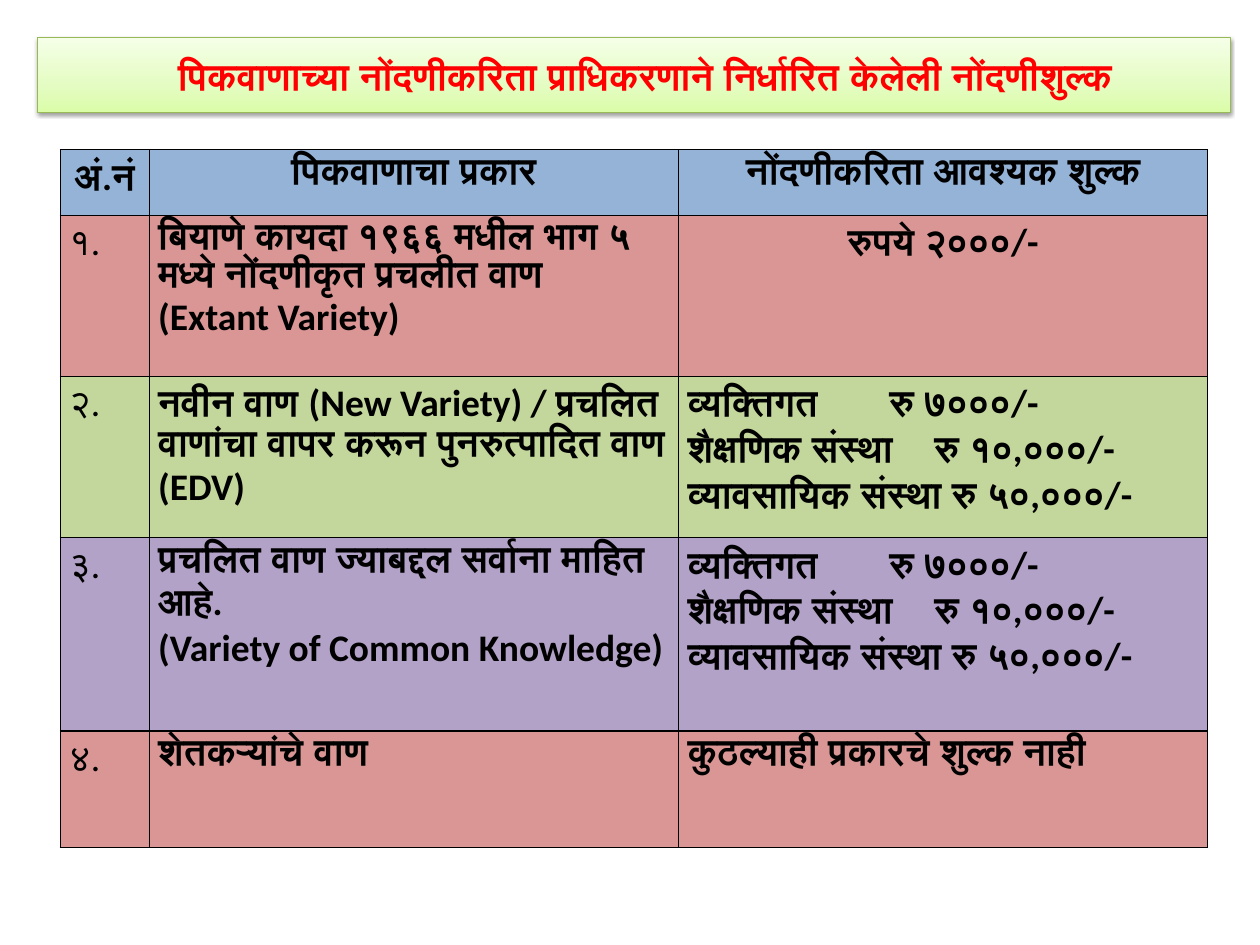
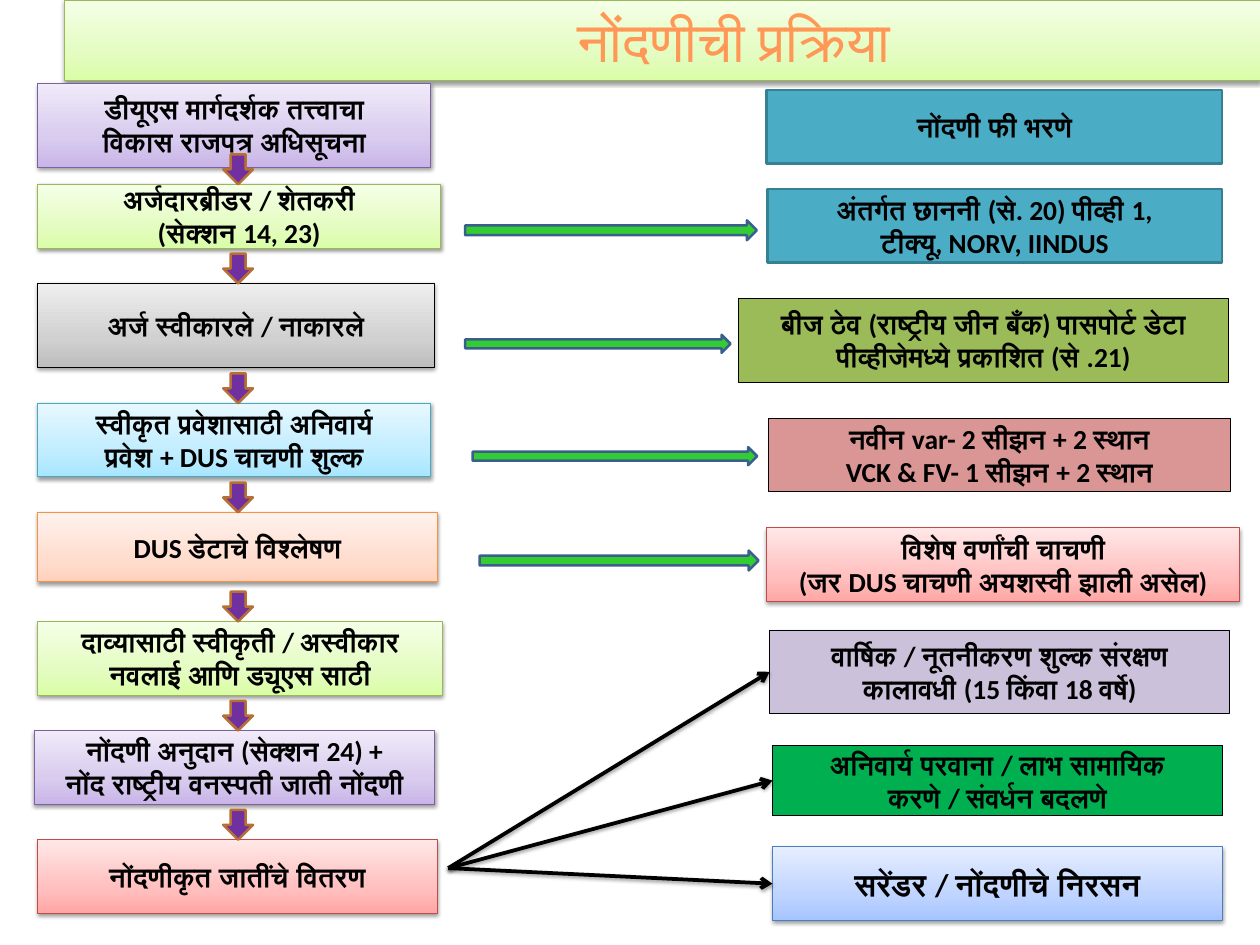
import copy

import lxml.etree
import pptx
import pptx.dml.color
import pptx.enum.shapes
import pptx.enum.text
import pptx.oxml.ns
import pptx.util

Cm = pptx.util.Cm
Pt = pptx.util.Pt
qn = pptx.oxml.ns.qn
RGBColor = pptx.dml.color.RGBColor
MSO_SHAPE = pptx.enum.shapes.MSO_SHAPE
PP_ALIGN = pptx.enum.text.PP_ALIGN
MSO_ANCHOR = pptx.enum.text.MSO_ANCHOR

FONT = "Calibri"

# The last value of a shape colour is its outline; three values before it form a gradient.
COLOURS = {
    "black": "000000",
    "red": "FF0000",
    "orange": "FF9856",
    "header": "95B3D7",
    "rose": "D99694",
    "olive": "C3D69B",
    "violet": "B3A2C7",
    "lime box": "DAFDA7 E4FCC2 F5FFE7 98B955",
    "lilac box": "C9B5E8 D8CBEE F0EAF9 7D60A0",
    "grey box": "BDBDBD D1D1D1 EEEEEE 000000",
    "sky box": "A7E6FF C1EDFF E7F8FF 46AAC5",
    "peach box": "FFD2BD FFDED0 FFF2ED F69240",
    "pink box": "FFA6A5 FFC0BF FFE7E7 BF4C48",
    "blue box": "A4C4FF BFD4FF E6EEFF 4B7EBC",
    "teal box": "4BACC6 377F92",
    "olive box": "9BBB59 000000",
    "rose box": "D99694 000000",
    "mauve box": "CCC1DA 000000",
    "green box": "00B050 000000",
    "down arrow": "7030A0 B76F34",
    "right arrow": "33CC33 3A5F8C",
}


def write_text(frame, text, size=22, colour="black", bold=True, align=PP_ALIGN.CENTER, tab_stops=()):
    """Write one paragraph per line; tab_stops holds one position in cm for each tabbed line."""
    for index, line in enumerate(text.split("\n")):
        paragraph = frame.paragraphs[0] if index == 0 else frame.add_paragraph()
        paragraph.alignment = align
        run = paragraph.add_run()
        run.text = line
        run.font.name = FONT
        run.font.size = Pt(size)
        run.font.bold = bold
        run.font.color.rgb = RGBColor.from_string(COLOURS[colour])
        if "\t" in line:
            tab_list = lxml.etree.SubElement(paragraph._p.get_or_add_pPr(), qn("a:tabLst"))
            lxml.etree.SubElement(tab_list, qn("a:tab"), pos=str(Cm(tab_stops[index])), algn="l")


def style_shape(shape, colour, line_width=0.75):
    """Set fill, outline and shadow; only gradient shapes and connectors cast a shadow."""
    *fills, outline = COLOURS[colour].split()
    shape.line.color.rgb = RGBColor.from_string(outline)
    shape.line.width = Pt(line_width)
    if fills:
        shape.shadow.inherit = False
        effects = shape._element.spPr.find(qn("a:effectLst"))
    else:
        effects = lxml.etree.SubElement(shape._element.spPr, qn("a:effectLst"))
    if len(fills) == 1:
        shape.fill.solid()
        shape.fill.fore_color.rgb = RGBColor.from_string(fills[0])
        return
    if fills:
        shape.fill.gradient()
        shape.fill.gradient_angle = 90
        stop_list = shape._element.spPr.find(qn("a:gradFill")).find(qn("a:gsLst"))
        stop_list.insert(1, copy.deepcopy(stop_list[0]))
        for stop, fill, position in zip(shape.fill.gradient_stops, fills, (0, 0.35, 1)):
            stop.color.rgb = RGBColor.from_string(fill)
            stop.position = position
    shadow = lxml.etree.SubElement(effects, qn("a:outerShdw"), blurRad="40000", dist="20000",
                                   dir="5400000", rotWithShape="0")
    shadow_colour = lxml.etree.SubElement(shadow, qn("a:srgbClr"), val=COLOURS["black"])
    lxml.etree.SubElement(shadow_colour, qn("a:alpha"), val="38000")


presentation = pptx.Presentation()
presentation.slide_width = Cm(35.56)
presentation.slide_height = Cm(26.67)

# Title bands: text, box, left and top inset, anchor, text format
titles = [
    ("पिकवाणाच्या नोंदणीकरिता प्राधिकरणाने निर्धारित केलेली नोंदणीशुल्क",
     (1.06, 1.06, 33.66, 2.12), 0.87, 0.13, MSO_ANCHOR.MIDDLE,
     {"size": 30, "colour": "red"}),
    ("नोंदणीची प्रक्रिया",
     (1.83, 0, 33.73, 2.28), 4.3, 0.18, MSO_ANCHOR.TOP,
     {"size": 45, "colour": "orange", "bold": False}),
]
slides = []
for text, box, left_inset, top_inset, anchor, text_format in titles:
    slide = presentation.slides.add_slide(presentation.slide_layouts[5])
    title = slide.shapes.title
    title.left, title.top, title.width, title.height = map(Cm, box)
    style_shape(title, "lime box")
    frame = title.text_frame
    frame.auto_size = pptx.enum.text.MSO_AUTO_SIZE.NONE
    frame.word_wrap = True
    frame.vertical_anchor = anchor
    frame.margin_left = Cm(left_inset)
    frame.margin_top = frame.margin_bottom = Cm(top_inset)
    write_text(frame, text, **text_format)
    slides.append(slide)
fee_slide, process_slide = slides

# Slide 1: registration fees
fees_by_applicant = "व्यक्तिगत\tरु ७०००/-\nशैक्षणिक संस्था\tरु १०,०००/-\nव्यावसायिक संस्था रु ५०,०००/-"
fee_rows = [
    ("header", 1.85, "अं.नं", "पिकवाणाचा प्रकार", "नोंदणीकरिता आवश्यक शुल्क"),
    ("rose", 4.55, "१.",
     "बियाणे कायदा १९६६ मधील भाग ५ मध्ये नोंदणीकृत प्रचलीत वाण\n(Extant Variety)", "रुपये २०००/-"),
    ("olive", 4.55, "२.",
     "नवीन वाण (New Variety) / प्रचलित वाणांचा वापर करून पुनरुत्पादित वाण (EDV)", fees_by_applicant),
    ("violet", 5.45, "३.",
     "प्रचलित वाण ज्याबद्दल सर्वाना माहित आहे.\n(Variety of Common Knowledge)", fees_by_applicant),
    ("rose", 3.3, "४.", "शेतकऱ्यांचे वाण", "कुठल्याही प्रकारचे शुल्क नाही"),
]
table = fee_slide.shapes.add_table(len(fee_rows), 3, Cm(1.7), Cm(4.23), Cm(32.39), Cm(19.7)).table
table.first_row = False
table.horz_banding = False
for column, width in zip(table.columns, (2.51, 14.94, 14.94)):
    column.width = Cm(width)

for row_index, (colour, height, *texts) in enumerate(fee_rows):
    table.rows[row_index].height = Cm(height)
    for column_index, text in enumerate(texts):
        cell = table.cell(row_index, column_index)
        properties = cell._tc.get_or_add_tcPr()
        for side in ("a:lnL", "a:lnR", "a:lnT", "a:lnB"):
            border = lxml.etree.SubElement(properties, qn(side), w=str(Pt(1)))
            border_fill = lxml.etree.SubElement(border, qn("a:solidFill"))
            lxml.etree.SubElement(border_fill, qn("a:srgbClr"), val=COLOURS["black"])
        cell.fill.solid()
        cell.fill.fore_color.rgb = RGBColor.from_string(COLOURS[colour])
        centred = row_index == 0 or (row_index, column_index) == (1, 2)
        write_text(cell.text_frame, text, size=30,
                   bold=row_index == 0 or column_index > 0,
                   align=PP_ALIGN.CENTER if centred else PP_ALIGN.LEFT,
                   tab_stops=(5.7, 6.97))

# Slide 2: registration process; boxes are left, top, width, height in cm
steps = [
    ("डीयूएस मार्गदर्शक तत्त्वाचा\nविकास राजपत्र अधिसूचना", "lilac box", (1.06, 2.36, 11.1, 2.36)),
    ("अर्जदारब्रीडर / शेतकरी\n(सेक्शन 14, 23)", "lime box", (1.06, 5.2, 11.38, 1.8)),
    ("अर्ज स्वीकारले / नाकारले", "grey box", (1.06, 8, 11.2, 2.36)),
    ("स्वीकृत प्रवेशासाठी अनिवार्य\nप्रवेश + DUS चाचणी शुल्क", "sky box", (1.06, 11.38, 11.1, 2.08)),
    ("DUS डेटाचे विश्लेषण", "peach box", (1.06, 14.46, 11.28, 1.96)),
    ("दाव्यासाठी स्वीकृती / अस्वीकार\nनवलाई आणि ड्यूएस साठी", "lime box", (1.06, 17.54, 11.43, 2.08)),
    ("नोंदणी अनुदान (सेक्शन 24) +\nनोंद राष्ट्रीय वनस्पती जाती नोंदणी", "lilac box",
     (0.97, 20.62, 11.3, 2.08)),
    ("नोंदणीकृत जातींचे वितरण", "pink box", (1.06, 23.7, 11.28, 2.08)),
]
details = [
    ("नोंदणी फी भरणे", "teal box", (21.64, 2.54, 12.85, 2.08)),
    ("अंतर्गत छाननी (से. 20) पीव्ही 1,\nटीक्यू, NORV, IINDUS", "teal box", (21.66, 5.33, 12.83, 2.08)),
    ("बीज ठेव (राष्ट्रीय जीन बँक) पासपोर्ट डेटा\nपीव्हीजेमध्ये प्रकाशित (से .21)", "olive box",
     (20.83, 8.43, 13.84, 2.36)),
    ("नवीन var- 2 सीझन + 2 स्थान\nVCK & FV- 1 सीझन + 2 स्थान", "rose box", (21.69, 11.8, 13.03, 2.08)),
    ("विशेष वर्णांची चाचणी\n(जर DUS चाचणी अयशस्वी झाली असेल)", "pink box", (21.64, 14.9, 13.34, 2.08)),
    ("वार्षिक / नूतनीकरण शुल्क संरक्षण\nकालावधी (15 किंवा 18 वर्षे)", "mauve box", (21.72, 17.78, 12.98, 2.36)),
    ("अनिवार्य परवाना / लाभ सामायिक\nकरणे / संवर्धन बदलणे", "green box", (21.8, 21.03, 12.7, 2)),
    ("सरेंडर / नोंदणीचे निरसन", "blue box", (21.8, 23.9, 12.7, 2.08)),
]
boxes = []
for text, colour, box in steps + details:
    shape = process_slide.shapes.add_shape(MSO_SHAPE.RECTANGLE, *map(Cm, box))
    style_shape(shape, colour, 2 if colour == "teal box" else 0.75)
    frame = shape.text_frame
    frame.word_wrap = False
    frame.vertical_anchor = MSO_ANCHOR.MIDDLE
    frame.margin_left = frame.margin_right = Cm(0.36)
    frame.margin_top = frame.margin_bottom = Cm(0.18)
    write_text(frame, text, size=25 if colour == "blue box" else 22)
    boxes.append(shape)

# Each down arrow ends on the top of the next step
arrow_size = 0.84
for text, colour, (left, top, width, height) in steps[1:]:
    arrow = process_slide.shapes.add_shape(
        MSO_SHAPE.DOWN_ARROW, Cm(6.3), Cm(top - arrow_size), Cm(arrow_size), Cm(arrow_size))
    style_shape(arrow, "down arrow", 2)

for arrow_box in [(13.13, 6.22, 8.23, 0.56), (13.13, 9.45, 7.49, 0.51),
                  (13.34, 12.62, 8.03, 0.51), (13.54, 15.54, 7.87, 0.56)]:
    arrow = process_slide.shapes.add_shape(MSO_SHAPE.RIGHT_ARROW, *map(Cm, arrow_box))
    style_shape(arrow, "right arrow", 2)

# The last step branches to the last three details
for outcome in boxes[-3:]:
    connector = process_slide.shapes.add_connector(
        pptx.enum.shapes.MSO_CONNECTOR.STRAIGHT, Cm(12.65), Cm(24.5), Cm(21.7), Cm(24.5))
    connector.end_connect(outcome, 1)
    style_shape(connector, "black", 3)
    lxml.etree.SubElement(connector.line._get_or_add_ln(), qn("a:tailEnd"), type="arrow")

presentation.save("out.pptx")
